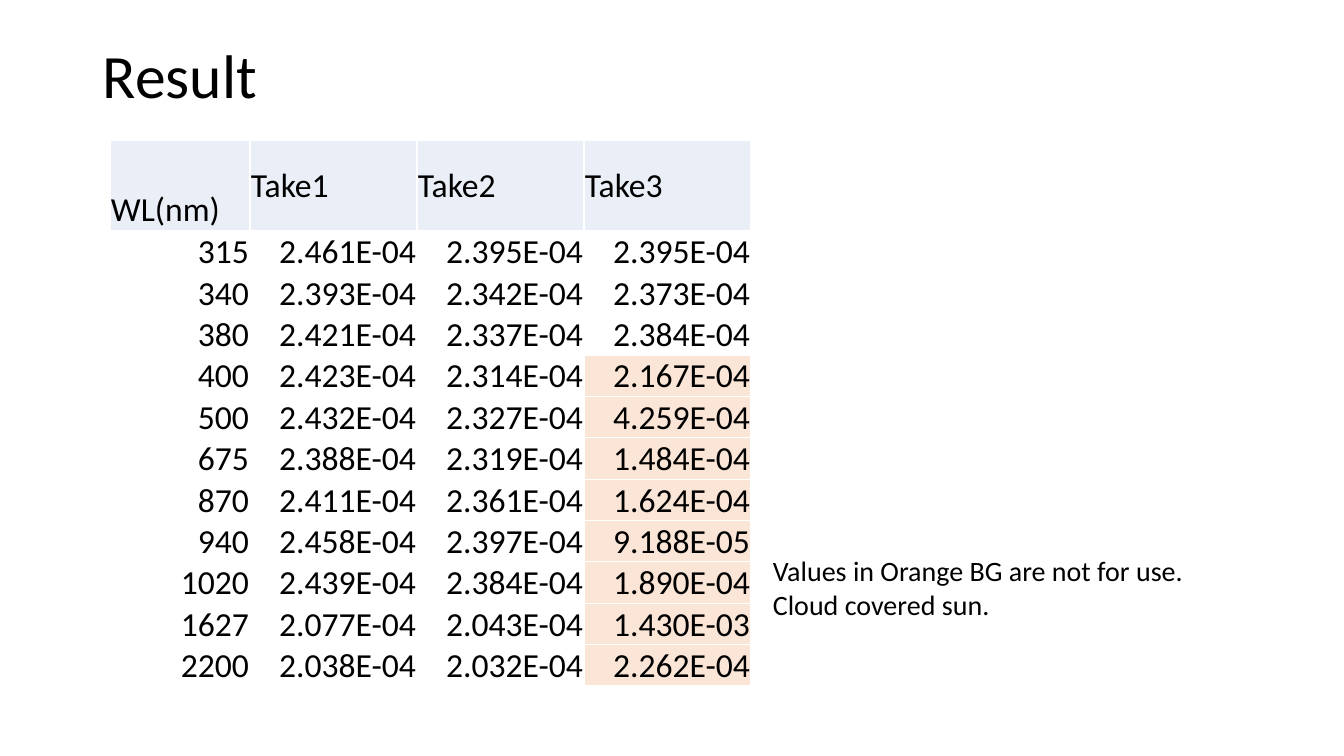
from pptx import Presentation
from pptx.dml.color import RGBColor
from pptx.enum.text import MSO_ANCHOR as Anchor, PP_ALIGN as Align
from pptx.oxml import parse_xml
from pptx.oxml.ns import nsdecls
from pptx.util import Emu, Pt

BLACK = RGBColor(0x00, 0x00, 0x00)
WHITE = RGBColor(0xFF, 0xFF, 0xFF)
HEADER_BLUE = RGBColor(0xEA, 0xEF, 0xF7)
CLOUDY_ORANGE = RGBColor(0xFB, 0xE5, 0xD6)

HEADERS = ("WL(nm)", "Take1", "Take2", "Take3")
READINGS = (
    ("315", "2.461E-04", "2.395E-04", "2.395E-04"),
    ("340", "2.393E-04", "2.342E-04", "2.373E-04"),
    ("380", "2.421E-04", "2.337E-04", "2.384E-04"),
    ("400", "2.423E-04", "2.314E-04", "2.167E-04"),
    ("500", "2.432E-04", "2.327E-04", "4.259E-04"),
    ("675", "2.388E-04", "2.319E-04", "1.484E-04"),
    ("870", "2.411E-04", "2.361E-04", "1.624E-04"),
    ("940", "2.458E-04", "2.397E-04", "9.188E-05"),
    ("1020", "2.439E-04", "2.384E-04", "1.890E-04"),
    ("1627", "2.077E-04", "2.043E-04", "1.430E-03"),
    ("2200", "2.038E-04", "2.032E-04", "2.262E-04"),
)
FIRST_CLOUDY_ROW = 4
TAKE3_COL = 3


def px(n):
    return Emu(round(n * 914400 / 100.8))


class SlideBuilder:
    font = "Calibri"
    color = BLACK

    def __init__(self, s):
        self.s = s

    def style(self, p, size):
        p.font.name = self.font
        p.font.size = Pt(size)
        p.font.color.rgb = self.color

    def text(self, x, y, w, h, text, size, anchor=Anchor.TOP, spacing=None):
        sp = self.s.shapes.add_textbox(px(x), px(y), px(w), px(h))
        tf = sp.text_frame
        tf.word_wrap = True
        tf.vertical_anchor = anchor
        p = tf.paragraphs[0]
        p.text = text
        p.line_spacing = spacing
        self.style(p, size)

    def table(self, x, y, widths, heights):
        sp = self.s.shapes.add_table(
            len(heights), len(widths), px(x), px(y), px(sum(widths)), px(sum(heights)))
        table = sp.table
        table.first_row = False
        table.horz_banding = False
        for col, w in zip(table.columns, widths):
            col.width = px(w)
        for row, h in zip(table.rows, heights):
            row.height = px(h)
        return table

    def cell(self, cell, text, size, align, anchor=Anchor.MIDDLE, fill=None):
        cell.margin_left = cell.margin_right = cell.margin_top = px(1)
        cell.margin_bottom = 0
        cell.vertical_anchor = anchor
        p = cell.text_frame.paragraphs[0]
        p.text = text
        p.alignment = align
        self.style(p, size)
        tcPr = cell._tc.get_or_add_tcPr()
        for side in ("lnL", "lnR", "lnT", "lnB"):
            tcPr.append(parse_xml(
                f'<a:{side} {nsdecls("a")} w="{Pt(1)}"><a:solidFill>'
                f'<a:srgbClr val="{WHITE}"/></a:solidFill></a:{side}>'))
        if fill is None:
            cell.fill.background()
        else:
            cell.fill.solid()
            cell.fill.fore_color.rgb = fill


def main():
    prs = Presentation()
    prs.slide_width, prs.slide_height = px(1344), px(756)
    b = SlideBuilder(prs.slides.add_slide(prs.slide_layouts[6]))

    b.text(93, 40, 1159, 78, "Result", 44, Anchor.MIDDLE, 0.9)

    table = b.table(110, 140, [140] + [167] * 3, [91] + [41] * len(READINGS))
    for c, name in enumerate(HEADERS):
        anchor = Anchor.MIDDLE if c else Anchor.BOTTOM
        b.cell(table.cell(0, c), name, 24, Align.LEFT, anchor, HEADER_BLUE)
    for r, reading in enumerate(READINGS, 1):
        for c, value in enumerate(reading):
            cloudy = c == TAKE3_COL and r >= FIRST_CLOUDY_ROW
            b.cell(table.cell(r, c), value, 24, Align.RIGHT,
                   fill=CLOUDY_ORANGE if cloudy else None)

    b.text(763, 549, 449, 78,
           "Values in Orange BG are not for use.\nCloud covered sun.", 20)

    prs.save("out.pptx")


if __name__ == "__main__":
    main()
